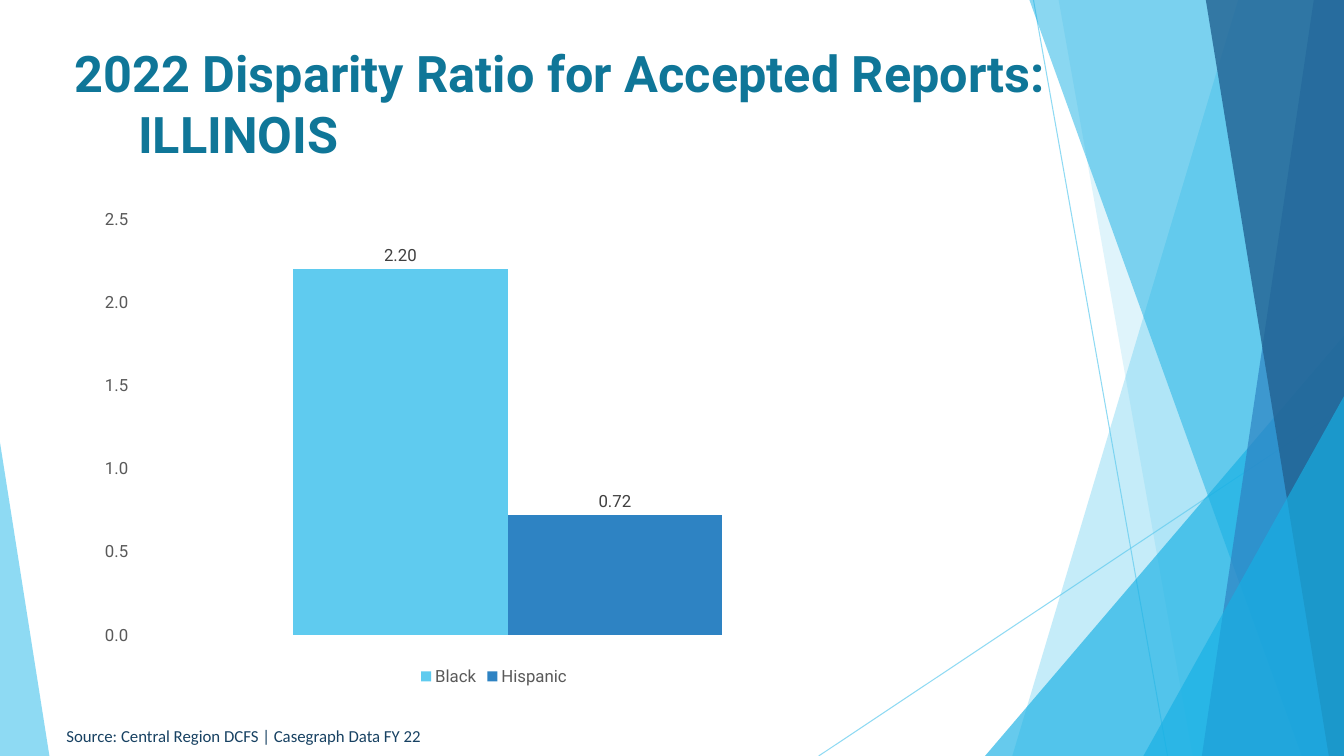
from lxml.etree import SubElement
from pptx import Presentation
from pptx.chart.data import CategoryChartData
from pptx.dml.color import RGBColor
from pptx.enum.chart import (XL_CHART_TYPE, XL_LABEL_POSITION,
                             XL_LEGEND_POSITION, XL_TICK_MARK)
from pptx.enum.shapes import MSO_CONNECTOR, MSO_SHAPE
from pptx.enum.text import MSO_ANCHOR, MSO_AUTO_SIZE, PP_ALIGN
from pptx.oxml.ns import qn
from pptx.util import Inches, Pt

HUES = {"sky": "5FCBEF", "cyan": "17B0E4", "blue": "2E83C3", "deep": "226292",
        "teal": "0F7698", "navy": "174162", "grey": "595959", "dark": "404040"}
WIDE, HIGH = 13.33, 7.5


def apply(item, **values):
    """Set each named value on the item."""
    for name, value in values.items():
        setattr(item, name, value)


class Deck:
    """Holds the style and the current slide."""

    def __init__(self):
        """Open a wide deck with one titled slide."""
        self.show = Presentation()
        apply(self.show, slide_width=Inches(WIDE), slide_height=Inches(HIGH))
        self.slide = self.show.slides.add_slide(self.show.slide_layouts[5])
        self.shapes = self.slide.shapes

    def hue(self, name):
        """Return the named colour."""
        return RGBColor.from_string(HUES[name])

    def font(self, font, name, size, hue, bold=False):
        """Format a font."""
        apply(font, name=name, size=Pt(size), bold=bold)
        font.color.rgb = self.hue(hue)

    def fade(self, shape, alpha):
        """Make the shape's colour partly clear."""
        for tone in shape._element.xpath("./p:spPr//a:srgbClr"):
            SubElement(tone, qn("a:alpha"), val=str(alpha * 1000))

    def paint(self, shape, hue, alpha):
        """Fill a shape with no outline or shadow."""
        shape.shadow.inherit = False
        shape.fill.solid()
        shape.fill.fore_color.rgb = self.hue(hue)
        shape.line.fill.background()
        self.fade(shape, alpha)

    def line(self, *ends):
        """Draw a thin ray."""
        ray = self.shapes.add_connector(MSO_CONNECTOR.STRAIGHT, *map(Inches, ends))
        ray.line.width = Pt(0.75)
        ray.line.color.rgb = self.hue("sky")
        SubElement(ray._element.spPr, qn("a:effectLst"))
        self.fade(ray, 70)

    def band(self, top, base, hue, alpha):
        """Fill from a slanted edge to the right side of the slide."""
        pen = self.shapes.build_freeform(Inches(top), 0)
        pen.add_line_segments([(Inches(x), Inches(y)) for x, y in
                               ((WIDE, 0), (WIDE, HIGH), (base, HIGH))])
        self.paint(pen.convert_to_shape(), hue, alpha)

    def wedge(self, left, top, width, peak, hue, alpha):
        """Draw a triangle that stands on the bottom edge."""
        box = map(Inches, (left, top, width, HIGH - top))
        shape = self.shapes.add_shape(MSO_SHAPE.ISOSCELES_TRIANGLE, *box)
        shape.adjustments[0] = peak
        self.paint(shape, hue, alpha)

    def title(self, text):
        """Fill the title, with later lines indented."""
        head = self.shapes.title
        apply(head, left=Inches(0.64), top=Inches(0.3),
              width=Inches(10.29), height=Inches(1.44))
        apply(head.text_frame, text=text, word_wrap=True,
              auto_size=MSO_AUTO_SIZE.NONE, vertical_anchor=MSO_ANCHOR.MIDDLE)
        para = head.text_frame.paragraphs[0]
        para.alignment = PP_ALIGN.LEFT
        hang = Inches(0.63)
        props = para._p.get_or_add_pPr()
        props.set("marL", str(hang))
        props.set("indent", str(-hang))
        for run in para.runs:
            self.font(run.font, "Roboto", 36, "teal", True)
        self.shapes._spTree.append(head._element)

    def note(self, text, *box):
        """Add a small text box."""
        frame = self.shapes.add_textbox(*map(Inches, box)).text_frame
        apply(frame, text=text, word_wrap=True,
              auto_size=MSO_AUTO_SIZE.SHAPE_TO_FIT_TEXT)
        self.font(frame.paragraphs[0].runs[0].font, "Calibri", 12, "navy")

    def chart(self, rows, *box):
        """Add the column chart."""
        data = CategoryChartData()
        data.categories = ["1"]
        for name, value, _ in rows:
            data.add_series(name, [value])
        chart = self.shapes.add_chart(XL_CHART_TYPE.COLUMN_CLUSTERED,
                                      *map(Inches, box), data).chart
        apply(chart, has_title=False, has_legend=True)
        self.font(chart.font, "Roboto", 12, "grey")
        apply(chart.legend, position=XL_LEGEND_POSITION.BOTTOM,
              include_in_layout=False)
        self.font(chart.legend.font, "Roboto", 12, "grey")
        chart.category_axis.visible = False
        axis = chart.value_axis
        apply(axis, minimum_scale=0, maximum_scale=2.5, major_unit=0.5,
              has_major_gridlines=False, major_tick_mark=XL_TICK_MARK.NONE,
              minor_tick_mark=XL_TICK_MARK.NONE)
        axis.format.line.fill.background()
        apply(axis.tick_labels, number_format="0.0", number_format_is_linked=False)
        self.font(axis.tick_labels.font, "Roboto", 12, "grey")
        plot = chart.plots[0]
        apply(plot, gap_width=150, overlap=0, vary_by_categories=False)
        for bar, (_, _, hue) in zip(plot.series, rows):
            bar.format.fill.solid()
            bar.format.fill.fore_color.rgb = self.hue(hue)
            apply(bar.data_labels, show_value=True, number_format="#,##0.00",
                  number_format_is_linked=False,
                  position=XL_LABEL_POSITION.OUTSIDE_END)
            self.font(bar.data_labels.font, "Roboto", 12, "dark")


def main():
    """Build and save the slide."""
    deck = Deck()
    deck.line(10.25, 0, 11.58, HIGH)
    deck.line(WIDE, 4.03, 8.12, HIGH)
    deck.band(12.28, 10.04, "sky", 36)
    deck.band(10.5, 11.83, "sky", 20)
    deck.wedge(9.77, 3.33, 3.56, 1, "cyan", 66)
    deck.band(10.21, 12.91, "cyan", 50)
    deck.band(13.03, 11.92, "blue", 70)
    deck.band(11.96, 13.18, "deep", 80)
    deck.wedge(11.34, 3.93, 1.99, 1, "cyan", 66)
    deck.wedge(0, 4.39, 0.49, 0, "sky", 70)
    deck.title("2022 Disparity Ratio for Accepted Reports:\vILLINOIS")
    deck.note("Source: Central Region DCFS | Casegraph Data FY 22",
              0.56, 7.15, 3.76, 0.3)
    deck.chart([("Black", 2.2, "sky"), ("Hispanic", 0.72, "blue")],
               0.88, 1.98, 8.04, 4.87)
    deck.show.save("out.pptx")


if __name__ == "__main__":
    main()
